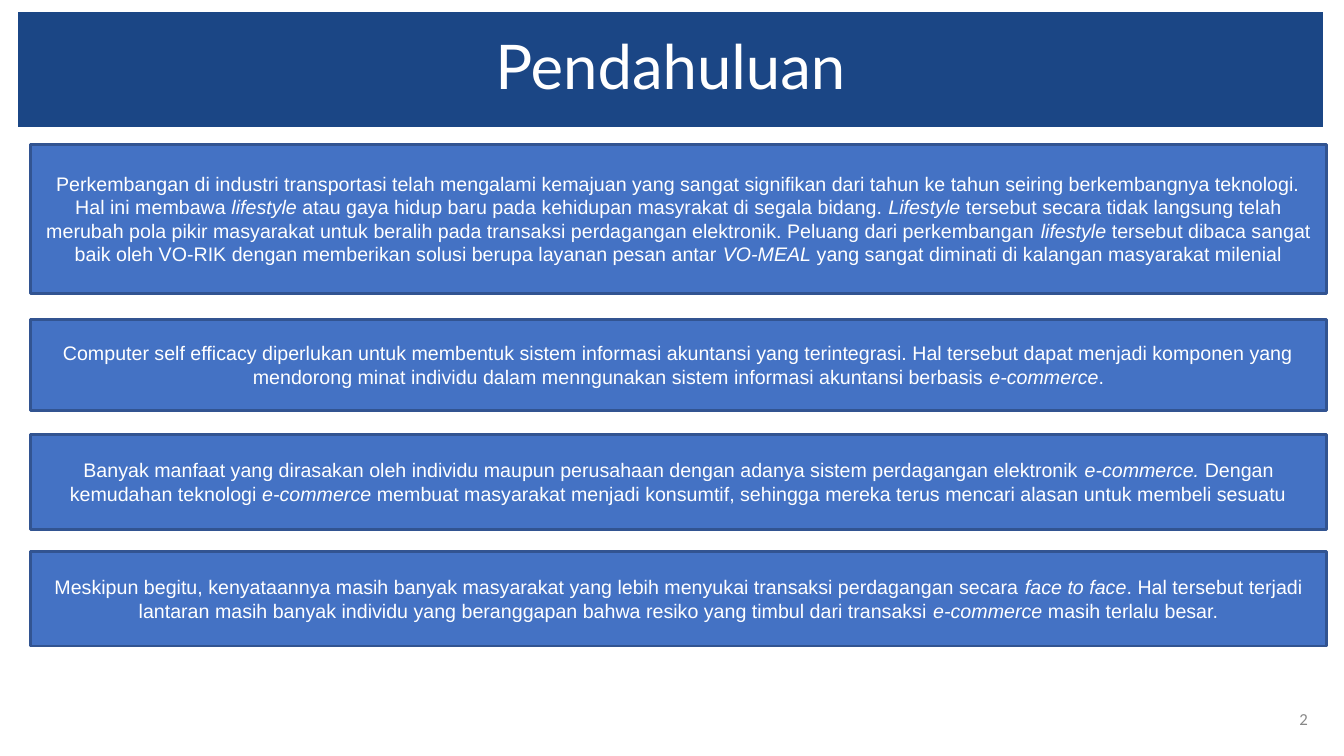
from pptx import Presentation
from pptx.dml.color import RGBColor
from pptx.enum.shapes import MSO_SHAPE as Shape
from pptx.enum.text import MSO_ANCHOR as Anchor, PP_ALIGN as Align
from pptx.util import Inches, Pt

WIDTH, HEIGHT = 13.33, 7.5
NAVY, BLUE, EDGE, WHITE, GREY = "1B4685", "4472C4", "325491", "FFFFFF", "888888"

PANEL_LEFT, PANEL_WIDTH = 0.3, 12.86
# Top, height and text of each panel; asterisks enclose italics.
PANELS = [
    (1.43, 1.48,
     "Perkembangan di industri transportasi telah mengalami kemajuan yang sangat "
     "signifikan dari tahun ke tahun seiring berkembangnya teknologi. Hal ini membawa "
     "*lifestyle* atau gaya hidup baru pada kehidupan masyrakat di segala bidang. "
     "*Lifestyle* tersebut secara tidak langsung telah merubah pola pikir masyarakat "
     "untuk beralih pada transaksi perdagangan elektronik. Peluang dari perkembangan "
     "*lifestyle* tersebut dibaca sangat baik oleh VO-RIK dengan memberikan solusi "
     "berupa layanan pesan antar *VO-MEAL* yang sangat diminati di kalangan "
     "masyarakat milenial"),
    (3.17, 0.9,
     "Computer self efficacy diperlukan untuk membentuk sistem informasi akuntansi "
     "yang terintegrasi. Hal tersebut dapat menjadi komponen yang mendorong minat "
     "individu dalam menngunakan sistem informasi akuntansi berbasis *e-commerce*."),
    (4.31, 0.94,
     "Banyak manfaat yang dirasakan oleh individu maupun perusahaan dengan adanya "
     "sistem perdagangan elektronik *e-commerce.* Dengan kemudahan teknologi "
     "*e-commerce* membuat masyarakat menjadi konsumtif, sehingga mereka terus "
     "mencari alasan untuk membeli sesuatu"),
    (5.47, 0.94,
     "Meskipun begitu, kenyataannya masih banyak masyarakat yang lebih menyukai "
     "transaksi perdagangan secara *face to face*. Hal tersebut terjadi lantaran masih "
     "banyak individu yang beranggapan bahwa resiko yang timbul dari transaksi "
     "*e-commerce* masih terlalu besar."),
]


def color(value):
    return RGBColor.from_string(value)


def write(box, text, font, size, ink, align=Align.CENTER):
    """Fill the box with one paragraph, setting parts between asterisks in italics."""
    frame = box.text_frame
    frame.word_wrap = True
    frame.vertical_anchor = Anchor.MIDDLE
    para = frame.paragraphs[0]
    para.alignment = align
    para.font.name, para.font.size = font, Pt(size)
    para.font.color.rgb = color(ink)
    for index, part in enumerate(text.split("*")):
        span = para.add_run()
        span.text = part
        if index % 2:
            span.font.italic = True
    return para


def add_bar(page, left, top, width, height, fill, edge=None):
    bar = page.shapes.add_shape(Shape.RECTANGLE, *map(Inches, (left, top, width, height)))
    bar.shadow.inherit = False
    bar.fill.solid()
    bar.fill.fore_color.rgb = color(fill)
    if edge:
        bar.line.color.rgb = color(edge)
        bar.line.width = Pt(2)
    else:
        bar.line.fill.background()
    return bar


def add_title(page, left, top, width, height):
    bar = add_bar(page, left, top, width, height, NAVY)
    write(bar, "Pendahuluan", "Lato", 44, WHITE).line_spacing = 0.9


def add_panels(page, left, width):
    for top, height, text in PANELS:
        panel = add_bar(page, left, top, width, height, BLUE, EDGE)
        write(panel, text, "Arial", 14, WHITE)


def add_page_number(page, left, top, width, height):
    box = page.shapes.add_textbox(*map(Inches, (left, top, width, height)))
    write(box, "2", "Calibri", 12, GREY, Align.RIGHT)


def main():
    deck = Presentation()
    deck.slide_width, deck.slide_height = Inches(WIDTH), Inches(HEIGHT)
    page = deck.slides.add_slide(deck.slide_layouts[6])
    add_page_number(page, 12.5, 6.93, 0.57, 0.4)
    add_title(page, 0.18, 0.12, 12.94, 1.14)
    add_panels(page, PANEL_LEFT, PANEL_WIDTH)
    deck.save("out.pptx")


if __name__ == "__main__":
    main()
